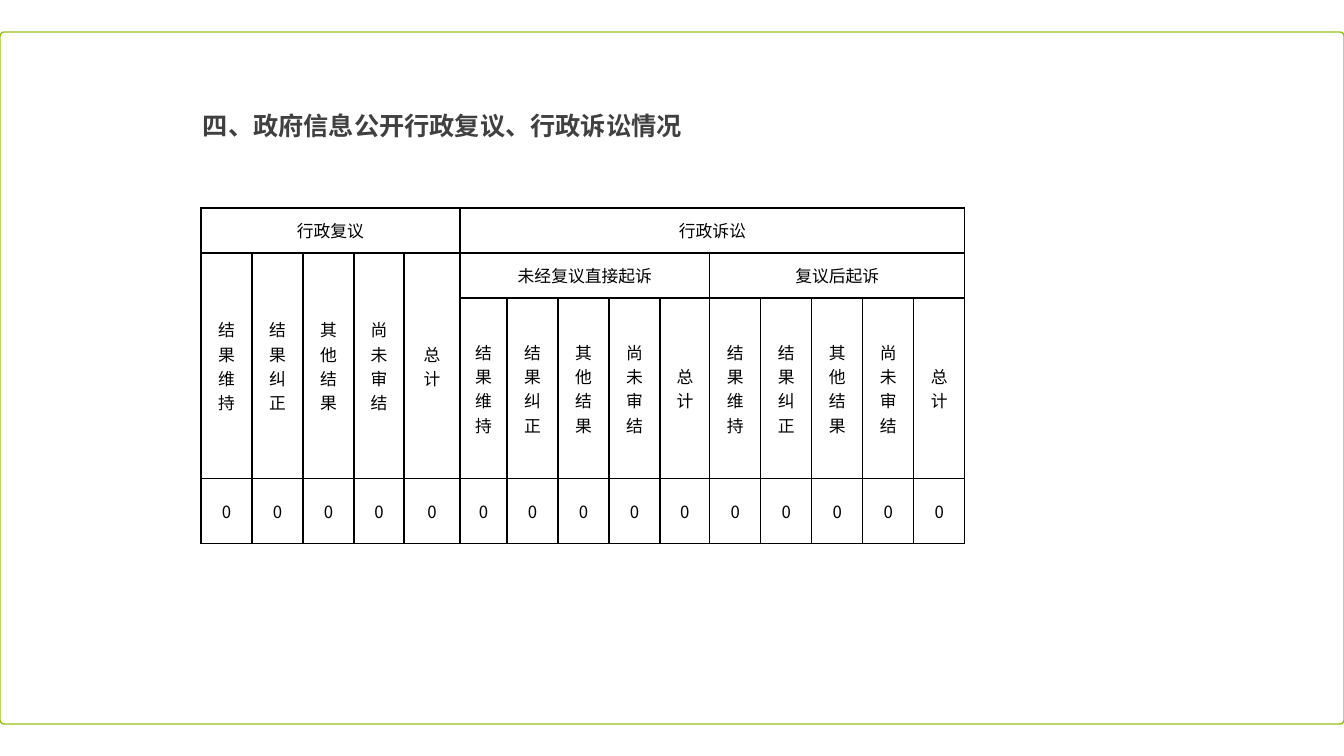
from lxml.etree import SubElement
from pptx import Presentation
from pptx.dml.color import RGBColor
from pptx.enum.shapes import MSO_SHAPE
from pptx.enum.text import MSO_ANCHOR, MSO_AUTO_SIZE, PP_ALIGN
from pptx.oxml.ns import qn
from pptx.util import Pt

EMU_PER_PX = 914400 / 100.8
BLACK, WHITE = "000000", "FFFFFF"
CJK_FONT, TABLE_FONT = "Noto Sans CJK SC", "Karla"

OUTCOMES = ["结果维持", "结果纠正", "其他结果", "尚未审结", "总计"]
COLUMN_WIDTHS = [51, 51, 51, 50, 56, 47, 51, 51, 51, 50, 51, 51, 51, 51, 51]
ROW_HEIGHTS = [45, 45, 181, 65]
WRAPPING_COLUMN = 5  # narrow enough to wrap after each character


def px(length):
    return round(length * EMU_PER_PX)


def color(hex_code):
    return RGBColor.from_string(hex_code)


def style(paragraph, font_name, size, hex_code, align, bold=False):
    paragraph.alignment = align
    font = paragraph.font
    font.name, font.size, font.bold = font_name, Pt(size), bold
    font.color.rgb = color(hex_code)


def add_frame(slide, left, top, width, height):
    frame = slide.shapes.add_shape(
        MSO_SHAPE.ROUNDED_RECTANGLE, px(left), px(top), px(width), px(height))
    frame.adjustments[0] = 0.006
    frame.shadow.inherit = False
    frame.fill.solid()
    frame.fill.fore_color.rgb = color(WHITE)
    frame.line.color.rgb = color("99C11B")
    frame.line.width = Pt(1)
    # Slightly transparent fill
    fill_color = frame.fill._xPr.find(qn("a:solidFill"))[0]
    SubElement(fill_color, qn("a:alpha"), val="90000")


def add_title(slide, text, left, top, width, height):
    title = slide.shapes.add_textbox(px(left), px(top), px(width), px(height))
    title.text_frame.word_wrap = True
    title.text_frame.auto_size = MSO_AUTO_SIZE.SHAPE_TO_FIT_TEXT
    title.text_frame.text = text
    style(title.text_frame.paragraphs[0], CJK_FONT, 18, "404040", PP_ALIGN.JUSTIFY, True)


def add_borders(cell):
    properties = cell._tc.get_or_add_tcPr()
    for position, side in enumerate(("a:lnL", "a:lnR", "a:lnT", "a:lnB")):
        border = properties.makeelement(qn(side), {"w": str(Pt(1))})
        SubElement(SubElement(border, qn("a:solidFill")), qn("a:srgbClr"), val=BLACK)
        properties.insert(position, border)


def fill_cell(cell, text, font_name=TABLE_FONT):
    cell.text = text
    for paragraph in cell.text_frame.paragraphs:
        style(paragraph, font_name, 12, BLACK, PP_ALIGN.CENTER)


def add_grid(slide, left, top):
    grid = slide.shapes.add_table(
        len(ROW_HEIGHTS), len(COLUMN_WIDTHS), px(left), px(top),
        px(sum(COLUMN_WIDTHS)), px(sum(ROW_HEIGHTS))).table
    grid.first_row = grid.horz_banding = False
    for column, width in zip(grid.columns, COLUMN_WIDTHS):
        column.width = px(width)
    for row, height in zip(grid.rows, ROW_HEIGHTS):
        row.height = px(height)
    for cell in grid.iter_cells():
        cell.fill.background()
        cell.margin_left = cell.margin_right = px(7)
        cell.margin_top = cell.margin_bottom = 0
        cell.vertical_anchor = MSO_ANCHOR.MIDDLE
        add_borders(cell)
    return grid


def add_group_heading(grid, row, first, last, text):
    grid.cell(row, first).merge(grid.cell(row, last))
    fill_cell(grid.cell(row, first), text)


def add_outcome(grid, column, name):
    # Review outcomes span two rows, lawsuit outcomes one
    row = 1 if column < len(OUTCOMES) else 2
    if row == 1:
        grid.cell(1, column).merge(grid.cell(2, column))
    stacked = name if column == WRAPPING_COLUMN else "\n".join(name)
    fill_cell(grid.cell(row, column), stacked)
    fill_cell(grid.cell(3, column), "0", CJK_FONT)


def main():
    presentation = Presentation()
    presentation.slide_width, presentation.slide_height = px(1344), px(756)
    slide = presentation.slides.add_slide(presentation.slide_layouts[6])

    # Frame and title
    add_frame(slide, 0, 32, 1344, 692)
    add_title(slide, "四、政府信息公开行政复议、行政诉讼情况", 193, 105, 609, 40)

    # Reviews and lawsuits table
    grid = add_grid(slide, 201, 208)
    add_group_heading(grid, 0, 0, 4, "行政复议")
    add_group_heading(grid, 0, 5, 14, "行政诉讼")
    add_group_heading(grid, 1, 5, 9, "未经复议直接起诉")
    add_group_heading(grid, 1, 10, 14, "复议后起诉")
    for column, name in enumerate(OUTCOMES * 3):
        add_outcome(grid, column, name)

    presentation.save("out.pptx")


if __name__ == "__main__":
    main()
